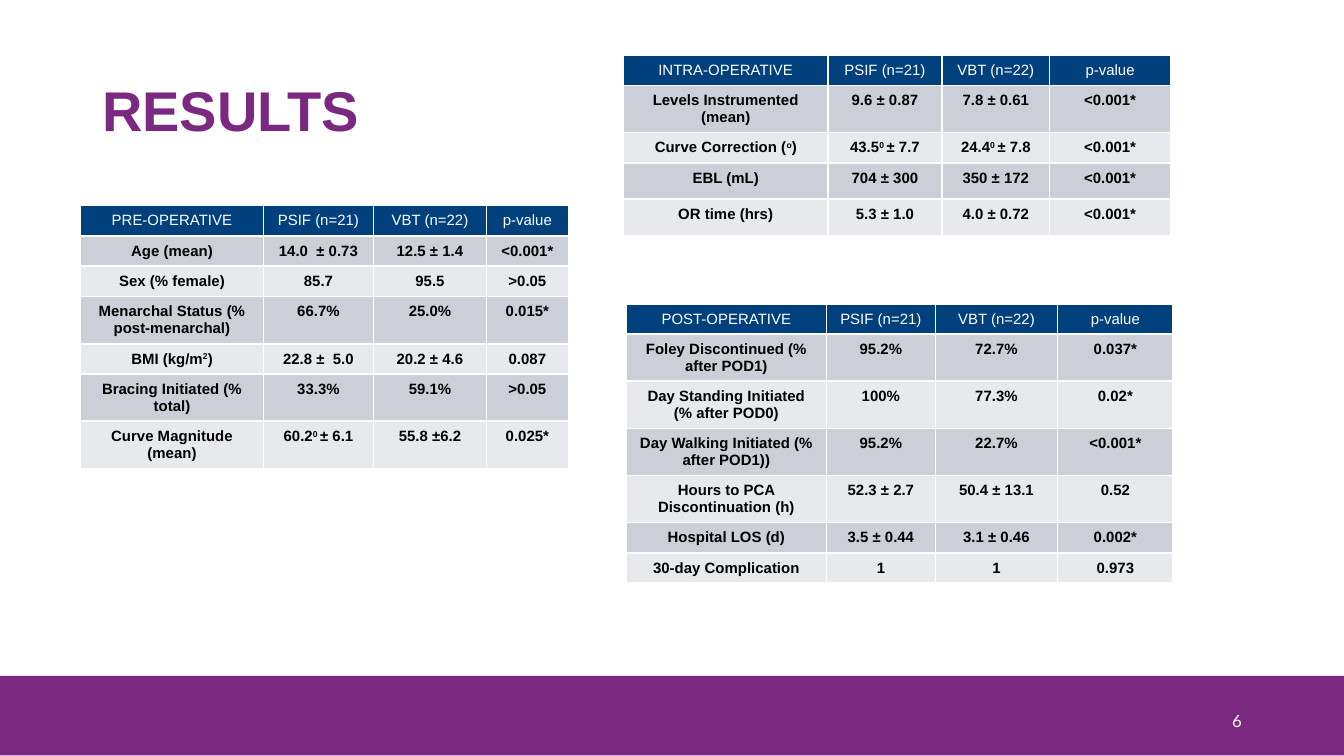
from pptx import Presentation
from pptx.dml.color import RGBColor
from pptx.enum.shapes import MSO_SHAPE
from pptx.enum.text import MSO_ANCHOR, MSO_AUTO_SIZE, PP_ALIGN
from pptx.util import Inches, Pt

PURPLE = RGBColor(0x7B, 0x28, 0x81)
NAVY = RGBColor(0x00, 0x41, 0x7D)
DARK = RGBColor(0xCC, 0xCF, 0xD7)
LIGHT = RGBColor(0xE7, 0xE9, 0xEC)
WHITE = RGBColor(0xFF, 0xFF, 0xFF)
BLACK = RGBColor(0x00, 0x00, 0x00)

# Row heights: one line, two lines, one line with extra room
ONE, TWO, TALL = 0.22, 0.35, 0.27
GROUPS = ["PSIF (n=21)", "VBT (n=22)", "p-value"]

# Text between carets is superscript
PRE = [
    ["PRE-OPERATIVE", *GROUPS],
    ["Age (mean)", "14.0  ± 0.73", "12.5 ± 1.4", "<0.001*"],
    ["Sex (% female)", "85.7", "95.5", ">0.05"],
    ["Menarchal Status (% post-menarchal)", "66.7%", "25.0%", "0.015*"],
    ["BMI (kg/m^2^)", "22.8 ±  5.0", "20.2 ± 4.6", "0.087"],
    ["Bracing Initiated (% total)", "33.3%", "59.1%", ">0.05"],
    ["Curve Magnitude (mean)", "60.2^0 ^± 6.1", "55.8 ±6.2", "0.025*"],
]
INTRA = [
    ["INTRA-OPERATIVE", *GROUPS],
    ["Levels Instrumented (mean)", "9.6 ± 0.87", "7.8 ± 0.61", "<0.001*"],
    ["Curve Correction (^o^)", "43.5^0 ^± 7.7", "24.4^0 ^± 7.8", "<0.001*"],
    ["EBL (mL)", "704 ± 300", "350 ± 172", "<0.001*"],
    ["OR time (hrs)", "5.3 ± 1.0", "4.0 ± 0.72", "<0.001*"],
]
POST = [
    ["POST-OPERATIVE", *GROUPS],
    ["Foley Discontinued (% after POD1)", "95.2%", "72.7%", "0.037*"],
    ["Day Standing Initiated (% after POD0)", "100%", "77.3%", "0.02*"],
    ["Day Walking Initiated (% after POD1))", "95.2%", "22.7%", "<0.001*"],
    ["Hours to PCA Discontinuation (h)", "52.3 ± 2.7", "50.4 ± 13.1", "0.52"],
    ["Hospital LOS (d)", "3.5 ± 0.44", "3.1 ± 0.46", "0.002*"],
    ["30-day Complication", "1", "1", "0.973"],
]


def write(frame, text, size=8, font="Arial", color=BLACK, bold=False,
          align=PP_ALIGN.CENTER, spacing=None):
    para = frame.paragraphs[0]
    para.alignment = align
    if spacing:
        para.line_spacing = spacing
    for i, part in enumerate(text.split("^")):
        run = para.add_run()
        run.text = part
        run.font.size = Pt(size)
        run.font.name = font
        run.font.bold = bold
        run.font.color.rgb = color
        if i % 2:
            run.font._element.set("baseline", "30000")


class Deck:
    def __init__(self):
        self.show = Presentation()
        self.show.slide_width = Inches(10)
        self.show.slide_height = Inches(10) * 9 // 16
        self.slide = self.show.slides.add_slide(self.show.slide_layouts[5])

    def frame(self, shape):
        frame = shape.text_frame
        frame.word_wrap = True
        frame.auto_size = MSO_AUTO_SIZE.NONE
        frame.vertical_anchor = MSO_ANCHOR.MIDDLE
        frame.margin_left = frame.margin_right = Inches(0.07)
        frame.margin_top = frame.margin_bottom = Inches(0.04)
        return frame

    def title(self, text, x, y, w, h):
        shape = self.slide.shapes.title
        shape.left, shape.top = Inches(x), Inches(y)
        shape.width, shape.height = Inches(w), Inches(h)
        write(self.frame(shape), text, size=30, color=PURPLE, bold=True,
              align=PP_ALIGN.LEFT, spacing=0.9)

    def band(self, x, y, w, h):
        shape = self.slide.shapes.add_shape(
            MSO_SHAPE.RECTANGLE, Inches(x), Inches(y), Inches(w), Inches(h))
        shape.shadow.inherit = False
        shape.fill.solid()
        shape.fill.fore_color.rgb = PURPLE
        shape.line.fill.background()

    def label(self, text, x, y, w, h, **style):
        box = self.slide.shapes.add_textbox(
            Inches(x), Inches(y), Inches(w), Inches(h))
        write(self.frame(box), text, **style)

    def table(self, rows, x, y, widths, heights):
        table = self.slide.shapes.add_table(
            len(rows), len(widths), Inches(x), Inches(y),
            Inches(sum(widths)), Inches(sum(heights))).table
        for col, width in zip(table.columns, widths):
            col.width = Inches(width)
        for r, (row, height) in enumerate(zip(rows, heights)):
            table.rows[r].height = Inches(height)
            head = r == 0
            for c, text in enumerate(row):
                cell = table.cell(r, c)
                cell.fill.solid()
                cell.fill.fore_color.rgb = (
                    NAVY if head else DARK if r % 2 else LIGHT)
                write(cell.text_frame, text, bold=not head,
                      color=WHITE if head else BLACK)


def main():
    deck = Deck()

    # Footer band and page number
    deck.band(0, 5.03, 10, 0.59)
    deck.label("6", 8.73, 5.21, 0.58, 0.3, size=9, font="Lato",
               color=WHITE, align=PP_ALIGN.RIGHT)

    deck.title("RESULTS", 0.69, 0.3, 8.62, 1.09)

    # Result tables
    deck.table(PRE, 0.6, 1.53, [1.36, 0.82, 0.84, 0.61],
               [ONE, ONE, ONE, TWO, ONE, TWO, TWO])
    deck.table(INTRA, 4.64, 0.41, [1.52, 0.85, 0.8, 0.9],
               [ONE, TWO, ONE, TALL, TALL])
    deck.table(POST, 4.66, 2.26, [1.49, 0.81, 0.91, 0.86],
               [ONE, TWO, TWO, TWO, TWO, ONE, ONE])

    deck.show.save("out.pptx")


if __name__ == "__main__":
    main()
